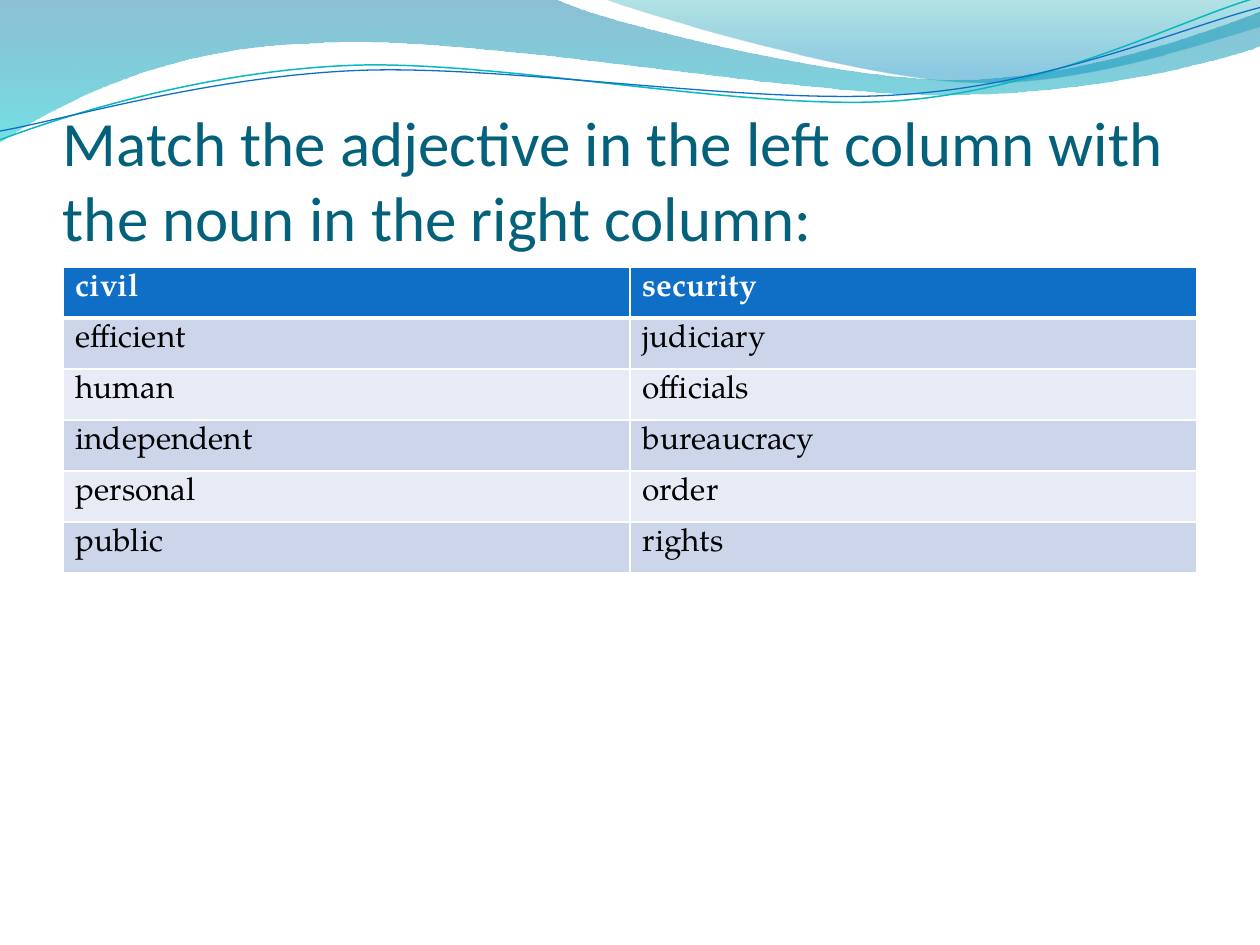
from lxml.etree import SubElement
from pptx import Presentation
from pptx.dml.color import RGBColor
from pptx.enum.text import MSO_ANCHOR
from pptx.oxml import parse_xml
from pptx.oxml.ns import nsdecls, qn
from pptx.util import Inches, Pt

TITLE = "Match the adjective in the left column with the noun in the right column:"
WORD_PAIRS = [
    ("civil", "security"),
    ("efficient", "judiciary"),
    ("human", "officials"),
    ("independent", "bureaucracy"),
    ("personal", "order"),
    ("public", "rights"),
]

WHITE = RGBColor(0xFF, 0xFF, 0xFF)
BLACK = RGBColor(0x00, 0x00, 0x00)
TITLE_TEAL = RGBColor(0x04, 0x61, 0x7B)
BLUE = RGBColor(0x0F, 0x6F, 0xC6)
AQUA = RGBColor(0x0A, 0xB8, 0xBF)
BAND_DARK = RGBColor(0xCC, 0xD5, 0xEA)
BAND_LIGHT = RGBColor(0xE7, 0xEB, 0xF5)

# Each step holds one point for a straight line, or three for a Bezier curve.
# Gradient stops are (position, colour, opacity in percent).
WAVE_BANDS = [
    {
        "start": (0, 0),
        "steps": [
            [(4.4, -0.01)],
            [(4.76, 0.17), (6.64, 0.63), (7.58, 0.63)],
            [(8.53, 0.63), (9.58, 0.26), (10, 0.09)],
            [(10.01, 0.36)],
            [(9.83, 0.44), (8.7, 0.76), (7.46, 0.75)],
            [(6.22, 0.75), (3.82, 0.28), (2.57, 0.34)],
            [(1.29, 0.36), (0.46, 0.83), (-0.01, 1.13)],
        ],
        "stops": [(0, RGBColor(0x00, 0x74, 0xA1), 45),
                  (1, RGBColor(0x00, 0xC6, 0xCF), 55)],
    },
    {
        "start": (4.79, -0.01),
        "steps": [
            [(5.09, 0.11), (6.82, 0.62), (7.69, 0.65)],
            [(8.56, 0.69), (9.61, 0.32), (10, 0.21)],
            [(10, 0)],
        ],
        "stops": [(0, RGBColor(0x00, 0xA1, 0xA9), 30),
                  (0.8, RGBColor(0x00, 0x8B, 0xBF), 45)],
    },
]
WAVE_LINES = [
    {
        "start": (0, 1.11),
        "steps": [
            [(0.48, 0.93), (1.58, 0.57), (2.77, 0.52)],
            [(3.95, 0.47), (5.93, 0.89), (7.13, 0.8)],
            [(8.33, 0.71), (9.38, 0.15), (9.98, -0.02)],
        ],
        "color": AQUA,
        "width": 0.85,
    },
    {
        "start": (0, 1.04),
        "steps": [
            [(0.47, 0.96), (1.64, 0.61), (2.83, 0.56)],
            [(4.03, 0.51), (5.97, 0.84), (7.17, 0.75)],
            [(8.36, 0.67), (9.41, 0.21), (10, 0.06)],
        ],
        "color": BLUE,
        "width": 0.75,
    },
]


def add_curve(slide, start, steps, close):
    """Build a freeform, then turn each three-point step into a Bezier curve."""
    points = [(Inches(x), Inches(y)) for step in steps for x, y in step]
    builder = slide.shapes.build_freeform(Inches(start[0]), Inches(start[1]))
    builder.add_line_segments(points, close=close)
    shape = builder.convert_to_shape()
    shape.shadow.inherit = False
    segments = iter(list(shape.element.iter(qn("a:lnTo"))))
    for step in steps:
        group = [next(segments) for _ in step]
        if len(group) == 3:
            first, *others = group
            first.tag = qn("a:cubicBezTo")
            for other in others:
                first.append(other[0])
                other.getparent().remove(other)
    return shape


def add_band(slide, band):
    shape = add_curve(slide, band["start"], band["steps"], close=True)
    shape.line.fill.background()
    shape.fill.gradient()
    shape.fill.gradient_angle = 270
    for stop, (position, color, opacity) in zip(shape.fill.gradient_stops, band["stops"]):
        stop.position = position
        stop.color.rgb = color
    colors = shape.element.spPr.find(qn("a:gradFill")).iter(qn("a:srgbClr"))
    for color_element, (_, _, opacity) in zip(colors, band["stops"]):
        SubElement(color_element, qn("a:alpha")).set("val", str(opacity * 1000))


def add_wave_line(slide, wave):
    shape = add_curve(slide, wave["start"], wave["steps"], close=False)
    shape.fill.background()
    shape.line.color.rgb = wave["color"]
    shape.line.width = Pt(wave["width"])


def format_run(run, **values):
    color = values.pop("color")
    for name, value in values.items():
        setattr(run.font, name, value)
    run.font.color.rgb = color


def add_title(slide):
    box = slide.shapes.add_textbox(Inches(0.5), Inches(0.77), Inches(9), Inches(1.25))
    frame = box.text_frame
    frame_format = {
        "word_wrap": True, "vertical_anchor": MSO_ANCHOR.BOTTOM,
        "margin_left": 0, "margin_top": Inches(0.05),
        "margin_right": 0, "margin_bottom": 0,
    }
    for name, value in frame_format.items():
        setattr(frame, name, value)
    run = frame.paragraphs[0].add_run()
    run.text = TITLE
    format_run(run, name="Calibri", size=Pt(36), color=TITLE_TEAL)


def set_borders(cell, widths):
    """Put white borders, given in points by side, ahead of the cell's fill."""
    properties = cell._tc.get_or_add_tcPr()
    for index, (side, width) in enumerate(widths.items()):
        properties.insert(index, parse_xml(
            f'<a:ln{side} {nsdecls("a")} w="{Pt(width)}"><a:solidFill>'
            f'<a:srgbClr val="{WHITE}"/></a:solidFill></a:ln{side}>'))


def add_word_table(slide):
    row_count = len(WORD_PAIRS)
    table = slide.shapes.add_table(
        row_count, 2, Inches(0.5), Inches(2.12), Inches(9), Inches(2.43)).table
    for row, pair in enumerate(WORD_PAIRS):
        header = row == 0
        fill = BLUE if header else BAND_DARK if row % 2 else BAND_LIGHT
        for column, word in enumerate(pair):
            cell = table.cell(row, column)
            cell.fill.solid()
            cell.fill.fore_color.rgb = fill
            set_borders(cell, {"L": 1, "R": 1, "T": 3 if row == 1 else 1,
                               "B": 3 if header else 1})
            run = cell.text_frame.paragraphs[0].add_run()
            run.text = word
            format_run(run, name="TeX Gyre Pagella", size=Pt(18), bold=header,
                       color=WHITE if header else BLACK)


def main():
    presentation = Presentation()
    presentation.slide_width = Inches(10)
    presentation.slide_height = Inches(7.5)
    slide = presentation.slides.add_slide(presentation.slide_layouts[6])
    for band in WAVE_BANDS:
        add_band(slide, band)
    for wave in WAVE_LINES:
        add_wave_line(slide, wave)
    add_title(slide)
    add_word_table(slide)
    presentation.save("out.pptx")


if __name__ == "__main__":
    main()
